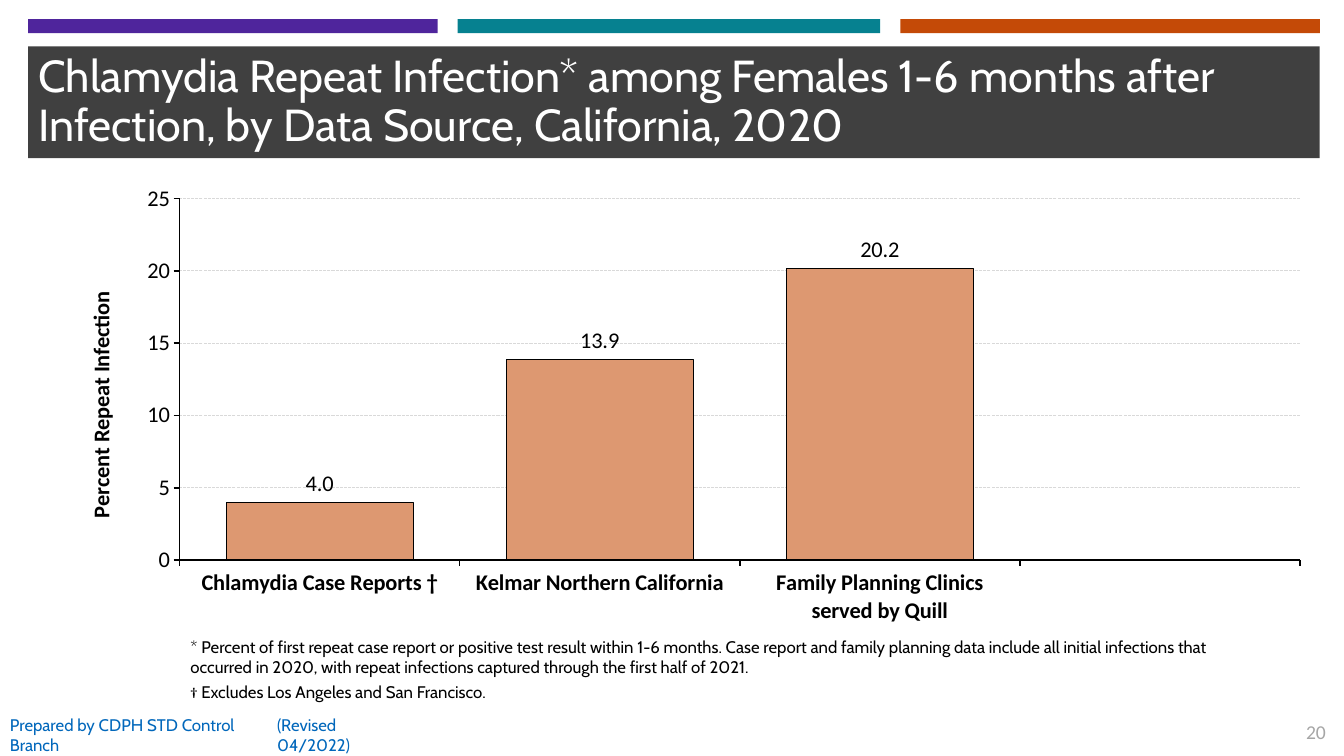
import lxml.etree
import pptx
import pptx.chart.data
import pptx.dml.color
import pptx.enum.chart
import pptx.enum.dml
import pptx.enum.shapes
import pptx.enum.text
import pptx.oxml.ns
import pptx.util

RGBColor = pptx.dml.color.RGBColor
CHARCOAL = RGBColor(0x40, 0x40, 0x40)
PURPLE = RGBColor(0x4F, 0x25, 0x9C)
TEAL = RGBColor(0x06, 0x81, 0x90)
ORANGE = RGBColor(0xC4, 0x4A, 0x07)
PEACH = RGBColor(0xDD, 0x98, 0x71)
BLUE = RGBColor(0x01, 0x67, 0xBB)
GREY = RGBColor(0xA6, 0xA6, 0xA6)
GRID_GREY = RGBColor(0xD9, 0xD9, 0xD9)
BLACK = RGBColor(0, 0, 0)
WHITE = RGBColor(0xFF, 0xFF, 0xFF)

WIDTH = pptx.util.Inches(13.33)
HEIGHT = pptx.util.Inches(7.5)
HEADING = (2.1, 6.13, 96.1, 14.8)
STRIPES = [(2.1, 30.46, PURPLE), (34.06, 31.43, TEAL), (66.99, 31.21, ORANGE)]
FOOTER_TOP = 94.53
MIDDLE = pptx.enum.text.MSO_ANCHOR.MIDDLE
TOP = pptx.enum.text.MSO_ANCHOR.TOP
LEFT = pptx.enum.text.PP_ALIGN.LEFT
RIGHT = pptx.enum.text.PP_ALIGN.RIGHT

TITLE = ("Chlamydia Repeat Infection* among Females 1-6 months after "
         "Infection, by Data Source, California, 2020")
NOTES = [
    "* Percent of first repeat case report or positive test result within 1-6 months. "
    "Case report and family planning data include all initial infections that "
    "occurred in 2020, with repeat infections captured through the first half of 2021.",
    "† Excludes Los Angeles and San Francisco.",
]
RATES = {
    "Chlamydia Case Reports †": 4.0,
    "Kelmar Northern California": 13.9,
    "Family Planning Clinics\nserved by Quill": 20.2,
    " ": None,
}


def apply(target, formats):
    for name, value in formats.items():
        setattr(target, name, value)


def percent(left, top, width, height):
    return (int(WIDTH * left / 100), int(HEIGHT * top / 100),
            int(WIDTH * width / 100), int(HEIGHT * height / 100))


def style_font(font, size, color, name="Calibri", bold=False):
    apply(font, {"size": pptx.util.Pt(size), "name": name, "bold": bold})
    font.color.rgb = color


def style_line(line, color, width):
    line.color.rgb = color
    line.width = pptx.util.Pt(width)


def add_band(page, area, color):
    band = page.shapes.add_shape(pptx.enum.shapes.MSO_SHAPE.RECTANGLE, *percent(*area))
    band.shadow.inherit = False
    band.fill.solid()
    band.fill.fore_color.rgb = color
    band.line.fill.background()


def fill_text(box, texts, size, color, name="Cabin", anchor=MIDDLE, wrap=True, **layout):
    frame = box.text_frame
    apply(frame, {"word_wrap": wrap, "vertical_anchor": anchor,
                  "auto_size": pptx.enum.text.MSO_AUTO_SIZE.NONE})
    for index, text in enumerate(texts):
        para = frame.add_paragraph() if index else frame.paragraphs[0]
        apply(para, {"alignment": LEFT, **layout})
        span = para.add_run()
        span.text = text
        style_font(span.font, size, color, name)


def add_text(page, area, texts, size, color, **options):
    fill_text(page.shapes.add_textbox(*percent(*area)), texts, size, color, **options)


def add_title(page):
    title = page.shapes.title
    apply(title, dict(zip(("left", "top", "width", "height"), percent(*HEADING))))
    fill_text(title, [TITLE], 32, WHITE, line_spacing=0.9)


def place_plot(chart, left, top, width, height):
    qn = pptx.oxml.ns.qn
    plot_area = chart.plots[0]._element.getparent()
    for old in plot_area.findall(qn("c:layout")):
        plot_area.remove(old)
    layout = lxml.etree.Element(qn("c:layout"))
    manual = lxml.etree.SubElement(layout, qn("c:manualLayout"))
    settings = {"layoutTarget": "inner", "xMode": "edge", "yMode": "edge",
                "x": left, "y": top, "w": width, "h": height}
    for name, value in settings.items():
        lxml.etree.SubElement(manual, qn("c:" + name)).set("val", str(value))
    plot_area.insert(0, layout)


def style_axis(axis, bold):
    axis.major_tick_mark = pptx.enum.chart.XL_TICK_MARK.OUTSIDE
    axis.minor_tick_mark = pptx.enum.chart.XL_TICK_MARK.NONE
    style_font(axis.tick_labels.font, 16, BLACK, bold=bold)
    style_line(axis.format.line, BLACK, 1.12)


def style_value_axis(axis):
    style_axis(axis, False)
    apply(axis, {"minimum_scale": 0, "maximum_scale": 25, "major_unit": 5,
                 "has_major_gridlines": True})
    apply(axis.tick_labels, {"number_format": "0", "number_format_is_linked": False})
    grid_line = axis.major_gridlines.format.line
    style_line(grid_line, GRID_GREY, 0.75)
    grid_line.dash_style = pptx.enum.dml.MSO_LINE.SQUARE_DOT
    frame = axis.axis_title.text_frame
    frame.text = "Percent Repeat Infection"
    style_font(frame.paragraphs[0].runs[0].font, 16, BLACK, bold=True)
    frame._txBody.bodyPr.set("rot", "-5400000")


def add_rate_chart(page, area):
    data = pptx.chart.data.CategoryChartData(number_format="0.0")
    data.categories = list(RATES)
    data.add_series("Series 1", list(RATES.values()))
    kind = pptx.enum.chart.XL_CHART_TYPE.COLUMN_CLUSTERED
    chart = page.shapes.add_chart(kind, *percent(*area), data).chart
    apply(chart, {"has_legend": False, "has_title": False})
    style_axis(chart.category_axis, True)
    style_value_axis(chart.value_axis)
    plot = chart.plots[0]
    apply(plot, {"gap_width": 50, "vary_by_categories": False, "has_data_labels": True})
    apply(plot.data_labels, {
        "show_value": True, "number_format": "0.0", "number_format_is_linked": False,
        "position": pptx.enum.chart.XL_LABEL_POSITION.OUTSIDE_END})
    style_font(plot.data_labels.font, 16, BLACK)
    columns = plot.series[0].format
    columns.fill.solid()
    columns.fill.fore_color.rgb = PEACH
    style_line(columns.line, BLACK, 0.75)
    place_plot(chart, 0.107, 0.073, 0.893, 0.766)


def main():
    deck = pptx.Presentation()
    apply(deck, {"slide_width": WIDTH, "slide_height": HEIGHT})
    page = deck.slides.add_slide(deck.slide_layouts[5])
    add_band(page, HEADING, CHARCOAL)
    for left, width, color in STRIPES:
        add_band(page, (left, 2.53, width, 1.87), color)
    title = page.shapes.title._element
    title.getparent().append(title)
    add_title(page)
    add_rate_chart(page, (3.38, 21.73, 93.4, 62.4))
    add_text(page, (13.43, 83.6, 81.4, 10), NOTES, 12, BLACK,
             anchor=TOP, space_after=pptx.util.Pt(3))
    add_text(page, (0, FOOTER_TOP, 21, 5.33),
             ["Prepared by CDPH STD Control Branch"], 12, BLUE)
    add_text(page, (19.88, FOOTER_TOP, 11.25, 5.33), ["(Revised 04/2022)"], 12, BLUE)
    add_text(page, (96.17, FOOTER_TOP, 3.23, 4.53), ["20"], 14, GREY,
             name="Calibri", anchor=TOP, wrap=False, alignment=RIGHT)
    deck.save("out.pptx")


if __name__ == "__main__":
    main()
